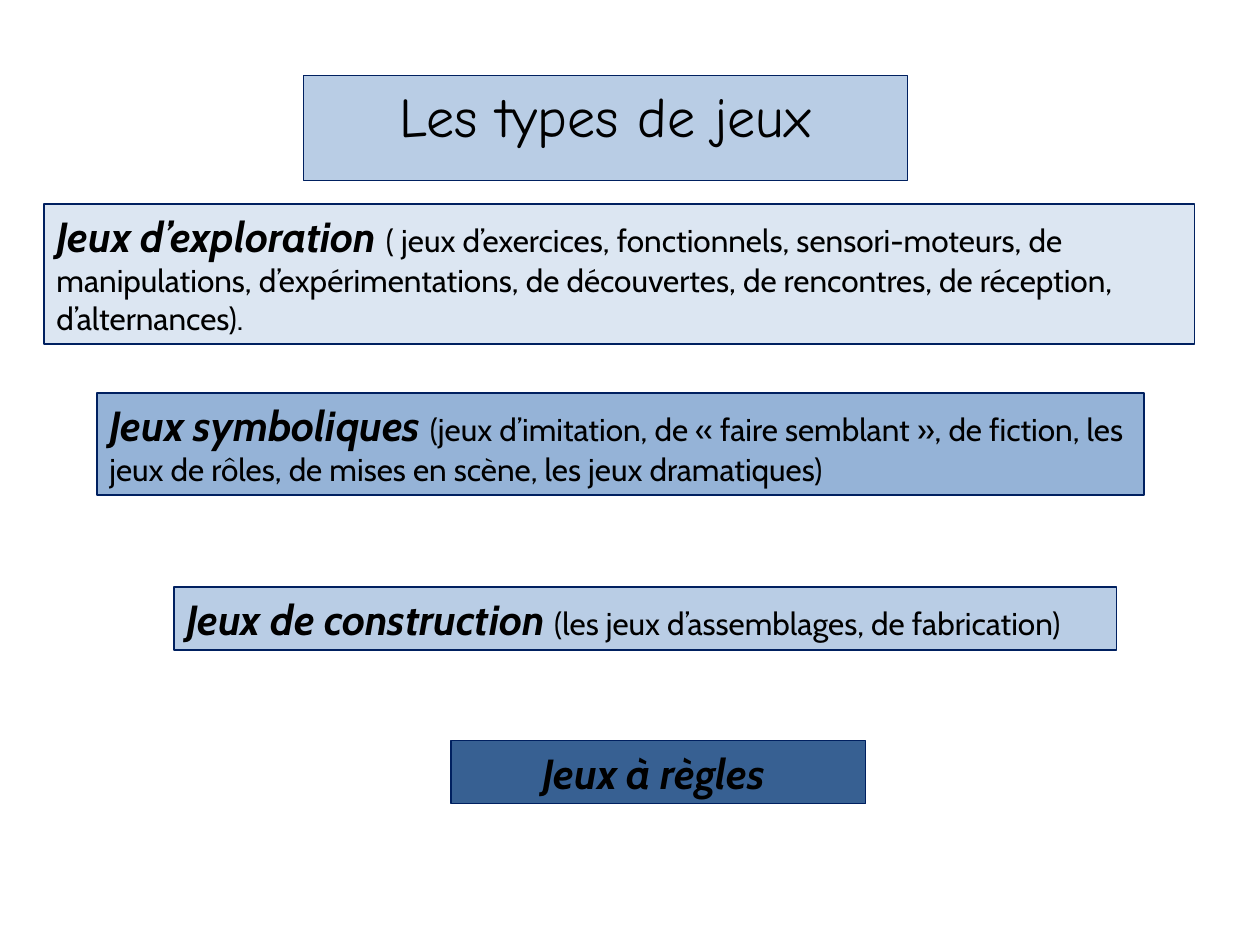
import pptx
import pptx.util
import pptx.dml.color
import pptx.enum.text

Inches, Pt = pptx.util.Inches, pptx.util.Pt
RGB = pptx.dml.color.RGBColor
ALIGN = pptx.enum.text.PP_ALIGN
LEFT, CENTER = ALIGN.LEFT, ALIGN.CENTER

BLACK = RGB(0x00, 0x00, 0x00)
NAVY = RGB(0x00, 0x20, 0x60)
PALE = RGB(0xDC, 0xE6, 0xF2)
LIGHT = RGB(0xB9, 0xCD, 0xE5)
MEDIUM = RGB(0x95, 0xB3, 0xD7)
DARK = RGB(0x37, 0x60, 0x92)

TITLE = "Les types de jeux"
TITLE_AREA = (2.41, 0.6, 4.79, 0.64)

# name, examples, area (left, top, width, height), fill, alignment
GAMES = [
    ("Jeux d’exploration ",
     "( jeux d’exercices, fonctionnels, sensori-moteurs, de manipulations, "
     "d’expérimentations, de découvertes, de rencontres, de réception, "
     "d’alternances).",
     (0.35, 1.62, 9.13, 1.11), PALE, LEFT),
    ("Jeux symboliques ",
     "(jeux d’imitation, de « faire semblant », de fiction, les jeux de "
     "rôles, de mises en scène, les jeux dramatiques)",
     (0.77, 3.12, 8.31, 0.81), MEDIUM, LEFT),
    ("Jeux de construction ",
     "(les jeux d’assemblages, de fabrication)",
     (1.38, 4.66, 7.48, 0.5), LIGHT, LEFT),
    ("Jeux à règles ", "", (3.58, 5.88, 3.29, 0.5), DARK, CENTER),
]


def style(box, area, fill, align):
    """Place and colour a box; return its first paragraph."""
    box.left, box.top, box.width, box.height = map(Inches, area)
    box.fill.solid()
    box.fill.fore_color.rgb = fill
    box.line.color.rgb = NAVY
    box.line.width = Pt(0.75)
    frame = box.text_frame
    frame.word_wrap = True
    frame.auto_size = pptx.enum.text.MSO_AUTO_SIZE.SHAPE_TO_FIT_TEXT
    frame.vertical_anchor = pptx.enum.text.MSO_ANCHOR.TOP
    para = frame.paragraphs[0]
    para.alignment = align
    return para


def write(para, text, face, size, strong=False):
    run = para.add_run()
    run.text = text
    font = run.font
    font.name, font.size = face, Pt(size)
    font.bold = font.italic = strong
    font.color.rgb = BLACK


def main():
    deck = pptx.Presentation()
    deck.slide_width, deck.slide_height = Inches(10), Inches(7.5)
    slide = deck.slides.add_slide(deck.slide_layouts[5])

    para = style(slide.shapes.title, TITLE_AREA, LIGHT, CENTER)
    write(para, TITLE, "Comic Neue", 32)

    for name, detail, area, fill, align in GAMES:
        box = slide.shapes.add_textbox(*map(Inches, area))
        para = style(box, area, fill, align)
        write(para, name, "Cabin", 24, strong=True)
        if detail:
            write(para, detail, "Cabin", 18)

    deck.save("out.pptx")


if __name__ == "__main__":
    main()
